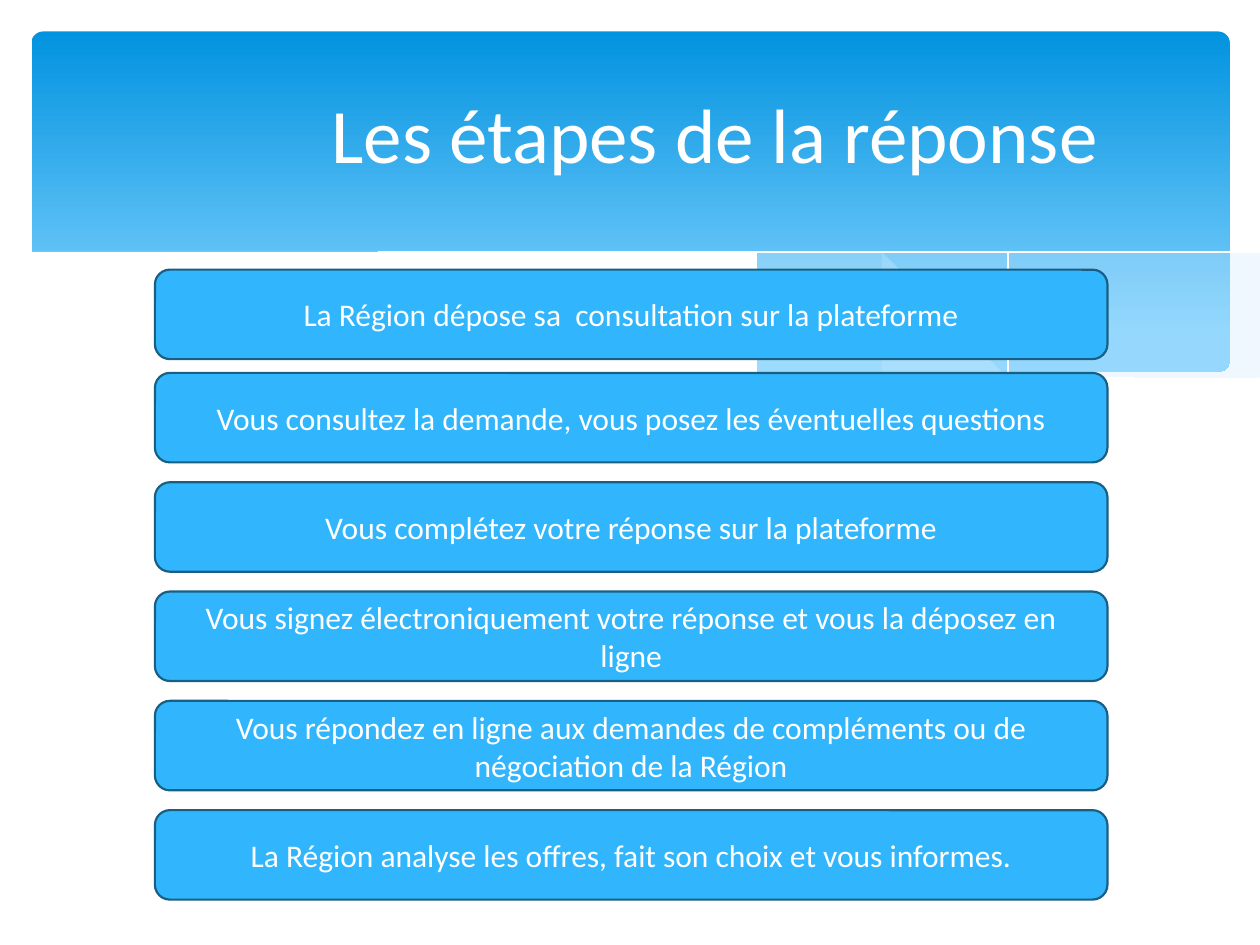
"""Build the slide listing the steps of answering a consultation."""
from lxml import etree
from pptx import Presentation
from pptx.dml.color import RGBColor
from pptx.enum.shapes import MSO_SHAPE
from pptx.enum.text import MSO_ANCHOR, PP_ALIGN
from pptx.oxml.ns import qn
from pptx.util import Inches, Pt

ROUNDED = MSO_SHAPE.ROUNDED_RECTANGLE
MIDDLE = MSO_ANCHOR.MIDDLE
CENTER = PP_ALIGN.CENTER
FONT = "Calibri"

COLORS = {
    "white": "FFFFFF",
    "header_top": "0293E0",
    "header_bottom": "83D3FE",
    "mist": "C6E7FC",
    "step": "31B6FD",
    "step_line": "195F84",
}

TITLE = "Les étapes de la réponse"
STEPS = [
    "La Région dépose sa  consultation sur la plateforme",
    "Vous consultez la demande, vous posez les éventuelles questions",
    "Vous complétez votre réponse sur la plateforme",
    "Vous signez électroniquement votre réponse et vous la déposez en ligne",
    "Vous répondez en ligne aux demandes de compléments ou de négociation de la Région",
    "La Région analyse les offres, fait son choix et vous informes.",
]
STEP_LEFT, STEP_WIDTH, STEP_HEIGHT = 1.23, 7.56, 0.71
FIRST_TOP, SECOND_TOP, LAST_TOP = 2.14, 2.96, 6.43

RIGHT_MIST = [
    [(9.76, 1.99), (9.21, 2.09), (8.61, 2.23), (7.79, 2.42), (7.06, 2.57), (6.61, 2.65)],
    [(6.61, 2.65), (7.05, 2.71), (7.57, 2.76), (8.03, 2.78), (8.44, 2.77),
     (8.81, 2.73), (9.21, 2.65), (9.49, 2.57), (9.76, 2.47)],
]
LEFT_MIST = [
    [(8.93, 2.73), (8.37, 2.65), (7.75, 2.54), (7.06, 2.4), (6.29, 2.22), (5.69, 2.08),
     (5.14, 1.98), (4.65, 1.91), (4.2, 1.87), (3.8, 1.86), (3.28, 1.87), (2.86, 1.91)],
    [(2.86, 1.91), (3.42, 1.99), (4.04, 2.11), (4.91, 2.32), (5.66, 2.48), (6.34, 2.61),
     (6.95, 2.7), (7.48, 2.76), (7.96, 2.78), (8.48, 2.77), (8.93, 2.73)],
]
LONG_LINE = [
    [(3.09, 1.95), (3.44, 1.9), (3.87, 1.87), (4.33, 1.87), (4.89, 1.9), (5.56, 1.97),
     (6.36, 2.08), (7.27, 2.26), (8.31, 2.51), (9.07, 2.72)],
]
SHORT_LINE = [
    [(6.13, 2.57), (6.72, 2.41), (7.48, 2.23), (8.36, 2.04), (8.95, 1.94),
     (9.38, 1.88), (9.75, 1.85)],
]
WHITE_WAVE = [
    [(9.77, 2.46), (9.4, 2.59), (8.99, 2.69), (8.5, 2.75), (8.09, 2.77), (7.61, 2.75),
     (7.08, 2.7), (6.47, 2.62), (5.79, 2.5), (5.03, 2.33), (4.18, 2.13), (3.39, 1.97),
     (2.71, 1.88), (2.11, 1.84), (1.61, 1.84), (1.19, 1.87), (0.85, 1.93),
     (0.52, 2.01), (0.23, 2.13)],
    [(0.23, 3.29), (9.77, 3.29)],
]
WAVES = [
    (RIGHT_MIST, {"fill": "mist", "opacity": 29}),
    (LEFT_MIST, {"fill": "mist", "opacity": 40}),
    (LONG_LINE, {"line": "white"}),
    (SHORT_LINE, {"line": "white"}),
    (WHITE_WAVE, {"fill": "white"}),
]


def color(name):
    return RGBColor.from_string(COLORS[name])


def smooth_curve(knots, samples=5):
    """Return points on a Catmull-Rom curve through the knots."""
    padded = [knots[0], *knots, knots[-1]]
    points = [knots[0]]
    for before, start, end, after in zip(padded, padded[1:], padded[2:], padded[3:]):
        for sample in range(1, samples + 1):
            t = sample / samples
            points.append(tuple(
                0.5 * (2 * b + (c - a) * t + (2 * a - 5 * b + 4 * c - d) * t ** 2
                       + (3 * b - a - 3 * c + d) * t ** 3)
                for a, b, c, d in zip(before, start, end, after)
            ))
    return points


def add_wave(page, curves, fill=None, line=None, opacity=100):
    points = [point for curve in curves for point in smooth_curve(curve)]
    builder = page.shapes.build_freeform(*points[0], scale=Inches(1))
    builder.add_line_segments(points[1:], close=fill is not None)
    wave = builder.convert_to_shape()
    wave.shadow.inherit = False
    if fill:
        wave.fill.solid()
        wave.fill.fore_color.rgb = color(fill)
    else:
        wave.fill.background()
    if line:
        wave.line.color.rgb = color(line)
        wave.line.width = Pt(0)
    else:
        wave.line.fill.background()
    if opacity < 100:
        shade = wave.fill._xPr.find(".//" + qn("a:srgbClr"))
        etree.SubElement(shade, qn("a:alpha"), val=str(opacity * 1000))


def add_header(page):
    header = page.shapes.add_shape(ROUNDED, Inches(0.25), Inches(0.25), Inches(9.51), Inches(2.7))
    header.adjustments[0] = 0.034
    header.shadow.inherit = False
    header.line.fill.background()
    header.fill.gradient()
    header.fill.gradient_angle = 270
    stops = (("header_top", 0), ("header_bottom", 0.9))
    for stop, (name, position) in zip(header.fill.gradient_stops, stops):
        stop.color.rgb = color(name)
        stop.position = position


def write_text(box, text, size):
    frame = box.text_frame
    frame.word_wrap = True
    frame.vertical_anchor = MIDDLE
    para = frame.paragraphs[0]
    para.alignment = CENTER
    span = para.add_run()
    span.text = text
    span.font.name = FONT
    span.font.size = Pt(size)
    span.font.color.rgb = color("white")


def add_step(page, text, top):
    box = page.shapes.add_shape(
        ROUNDED, Inches(STEP_LEFT), Inches(top), Inches(STEP_WIDTH), Inches(STEP_HEIGHT))
    box.shadow.inherit = False
    box.fill.solid()
    box.fill.fore_color.rgb = color("step")
    box.line.color.rgb = color("step_line")
    box.line.width = Pt(1.25)
    write_text(box, text, size=18)


def main():
    deck = Presentation()
    deck.slide_width, deck.slide_height = Inches(10), Inches(7.5)
    page = deck.slides.add_slide(deck.slide_layouts[6])
    add_header(page)
    for curves, style in WAVES:
        add_wave(page, curves, **style)
    title = page.shapes.add_textbox(Inches(1.85), Inches(0.37), Inches(7.65), Inches(1.37))
    write_text(title, TITLE, size=44)
    pitch = (LAST_TOP - SECOND_TOP) / (len(STEPS) - 2)
    tops = [FIRST_TOP] + [SECOND_TOP + pitch * row for row in range(len(STEPS) - 1)]
    for text, top in zip(STEPS, tops):
        add_step(page, text, top)
    deck.save("out.pptx")


if __name__ == "__main__":
    main()
